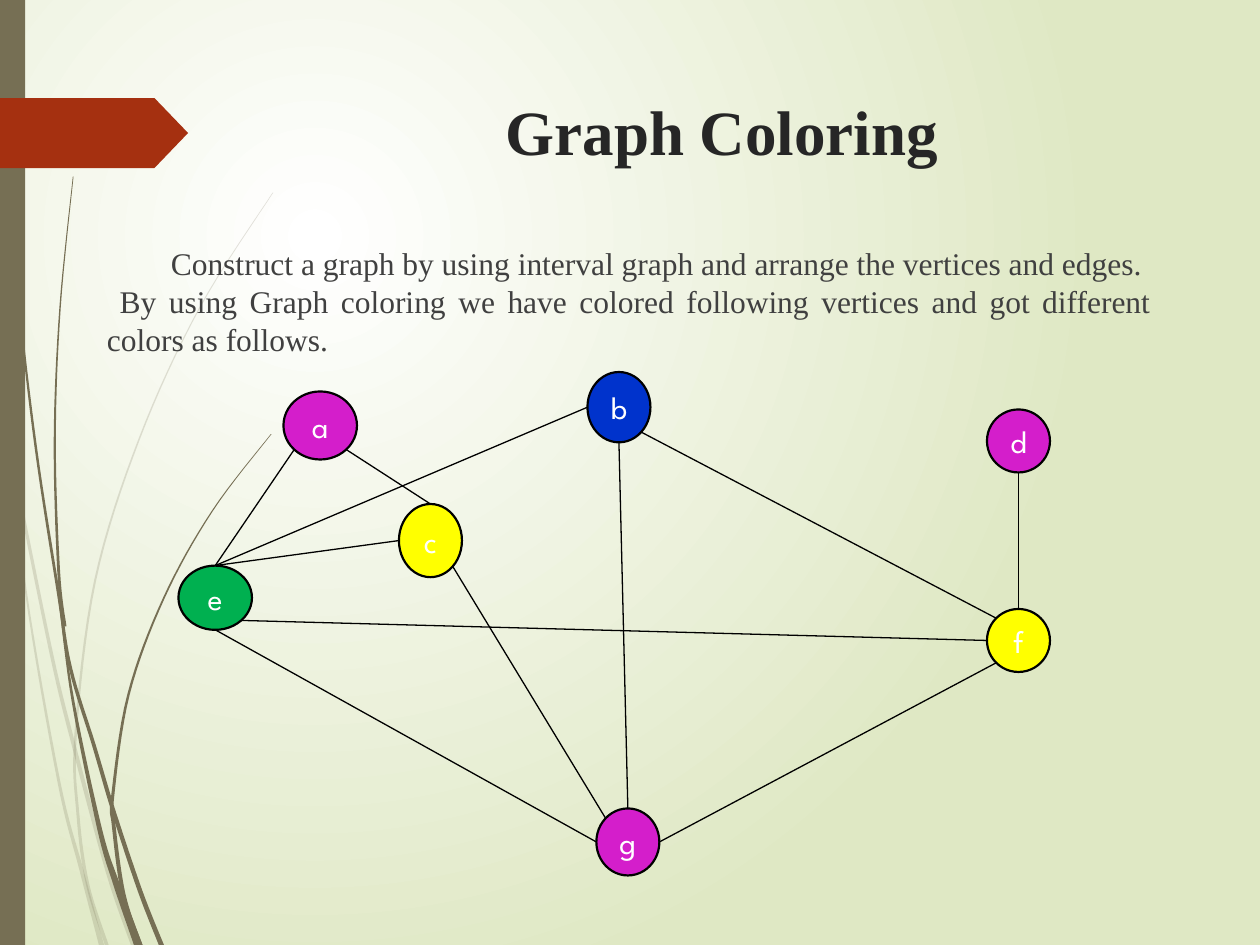
"""Build the Graph Coloring slide: a coloured interval graph over a decorated background."""
from dataclasses import dataclass

from lxml import etree
from pptx import Presentation
from pptx import util as u
from pptx.dml.color import RGBColor
from pptx.enum import shapes, text
from pptx.oxml.ns import qn

Pt = u.Pt
BLACK = RGBColor(0x00, 0x00, 0x00)
WHITE = RGBColor(0xFF, 0xFF, 0xFF)
HEADING = RGBColor(0x26, 0x26, 0x26)
BODY = RGBColor(0x40, 0x40, 0x40)
OLIVE = RGBColor(0x76, 0x6F, 0x54)
RUST = RGBColor(0xA5, 0x30, 0x10)
PALE_GREEN = RGBColor(0xDF, 0xE8, 0xC4)
MAGENTA = RGBColor(0xD4, 0x1E, 0xCB)
GREEN = RGBColor(0x00, 0xB0, 0x50)
YELLOW = RGBColor(0xFF, 0xFF, 0x00)
BLUE = RGBColor(0x00, 0x33, 0xCC)
SERIF = "Times New Roman"
SANS = "League Spartan"
DIAGONAL = 0.354
SITES = {
    "top": (0, -0.5), "bottom": (0, 0.5), "left": (-0.5, 0), "right": (0.5, 0),
    "top left": (-DIAGONAL, -DIAGONAL), "bottom left": (-DIAGONAL, DIAGONAL),
    "bottom right": (DIAGONAL, DIAGONAL),
}


@dataclass(frozen=True)
class Strand:
    points: tuple
    start_width: float
    end_width: float
    opacity: int = 100


@dataclass(frozen=True)
class Vertex:
    x: float
    y: float
    width: float
    height: float
    color: RGBColor

    def site(self, side: str) -> tuple:
        dx, dy = SITES[side]
        return self.x + self.width * (0.5 + dx), self.y + self.height * (0.5 + dy)


@dataclass(frozen=True)
class Edge:
    start: str
    start_side: str
    end: str
    end_side: str


STRANDS = (
    Strand(((0, 209), (5, 250), (8, 268), (29.5, 374), (43, 429), (62, 499), (76.3, 540)), 1, 3, 20),
    Strand(((5.8, 252), (14.8, 338), (33.5, 446), (46.5, 497), (58, 540)), 0.4, 3, 20),
    Strand(((156, 110), (114, 176), (79.5, 251), (54.3, 332), (43.2, 420), (44.5, 465),
            (50, 505), (61, 540)), 0.4, 2.2, 20),
    Strand(((1.8, 0), (4, 79), (10.4, 168), (20.5, 256), (33.5, 340), (40.3, 382),
            (53.7, 426), (65, 464), (80, 509), (92.2, 540)), 0.6, 3, 100),
    Strand(((33.8, 343), (41.8, 401), (57, 474), (66.5, 505), (79, 540)), 0.5, 5, 100),
    Strand(((41.8, 101), (34.3, 176), (31.3, 251), (33.5, 326), (37, 358)), 0.4, 2, 100),
    Strand(((155, 248), (121.3, 292), (93.5, 342), (73.4, 397), (64.4, 455), (65, 472),
            (70.5, 511), (80, 540)), 0.4, 2.8, 100),
)

VERTICES = {
    "a": Vertex(162, 223.7, 42, 38.9, MAGENTA),
    "e": Vertex(102, 323.2, 42, 36.7, GREEN),
    "c": Vertex(228, 288, 36, 41.8, YELLOW),
    "b": Vertex(335.7, 212.6, 36, 40.2, BLUE),
    "g": Vertex(340.8, 462, 36, 38.3, MAGENTA),
    "d": Vertex(564, 234, 36, 36, MAGENTA),
    "f": Vertex(564, 348, 36, 36, YELLOW),
}

EDGES = (
    Edge("e", "top", "a", "bottom left"),
    Edge("a", "bottom right", "c", "top"),
    Edge("e", "top", "c", "left"),
    Edge("e", "top", "b", "left"),
    Edge("e", "bottom right", "f", "left"),
    Edge("e", "bottom", "g", "left"),
    Edge("b", "bottom", "g", "top"),
    Edge("b", "bottom right", "f", "top left"),
    Edge("d", "bottom", "f", "top"),
    Edge("g", "right", "f", "bottom left"),
    Edge("c", "bottom right", "g", "top left"),
)


def write(paragraph, words: str, *, size: float, font: str, color: RGBColor, bold: bool = False,
          align=text.PP_ALIGN.CENTER, indent: float = 0, before: float = 0) -> None:
    run = paragraph.add_run()
    run.text = words
    run.font.size, run.font.name, run.font.bold = Pt(size), font, bold
    run.font.color.rgb = color
    paragraph.alignment = align
    paragraph.space_before = Pt(before)
    if indent:
        paragraph._p.get_or_add_pPr().set("indent", str(Pt(indent)))


def paint(shape, color: RGBColor, opacity: int = 100) -> None:
    shape.shadow.inherit = False
    shape.line.fill.background()
    shape.fill.solid()
    shape.fill.fore_color.rgb = color
    if opacity < 100:
        tint = shape._element.spPr.find(".//" + qn("a:srgbClr"))
        etree.SubElement(tint, qn("a:alpha"), val=str(opacity * 1000))


def smooth(points: tuple, steps: int = 8) -> list:
    padded = (points[0], *points, points[-1])
    curve = []
    for p0, p1, p2, p3 in zip(padded, padded[1:], padded[2:], padded[3:]):
        for t in (step / steps for step in range(steps)):
            curve.append(tuple(
                0.5 * (2 * b + (c - a) * t + (2 * a - 5 * b + 4 * c - d) * t**2
                       + (3 * b - a - 3 * c + d) * t**3)
                for a, b, c, d in zip(p0, p1, p2, p3)))
    return curve + [points[-1]]


def draw_strand(slide, strand: Strand) -> None:
    curve = smooth(strand.points)
    growth = (strand.end_width - strand.start_width) / (len(curve) - 1)
    halves = [(strand.start_width + growth * i) / 2 for i in range(len(curve))]
    left = [(Pt(x - half), Pt(y)) for (x, y), half in zip(curve, halves)]
    right = [(Pt(x + half), Pt(y)) for (x, y), half in zip(curve, halves)]
    builder = slide.shapes.build_freeform(*left[0])
    builder.add_line_segments(left[1:] + right[::-1], close=True)
    paint(builder.convert_to_shape(), OLIVE, strand.opacity)


def draw_vertex(slide, label: str, vertex: Vertex) -> None:
    oval = slide.shapes.add_shape(shapes.MSO_SHAPE.OVAL, Pt(vertex.x), Pt(vertex.y),
                                  Pt(vertex.width), Pt(vertex.height))
    paint(oval, vertex.color)
    oval.line.color.rgb = BLACK
    oval.line.width = Pt(1.25)
    oval.text_frame.vertical_anchor = text.MSO_ANCHOR.MIDDLE
    write(oval.text_frame.paragraphs[0], label, size=18, font=SANS, color=WHITE)


def draw_edge(slide, edge: Edge) -> None:
    start = VERTICES[edge.start].site(edge.start_side)
    end = VERTICES[edge.end].site(edge.end_side)
    line = slide.shapes.add_connector(shapes.MSO_CONNECTOR.STRAIGHT, *map(Pt, start + end))
    line.line.color.rgb = BLACK
    line.line.width = Pt(0.75)
    etree.SubElement(line._element.spPr, qn("a:effectLst"))


def draw_background(slide) -> None:
    fill = slide.background.fill
    fill.gradient()
    for stop, color in zip(fill.gradient_stops, (WHITE, PALE_GREEN)):
        stop.color.rgb = color
    gradient = slide._element.find(".//" + qn("a:gradFill"))
    gradient.remove(gradient.find(qn("a:lin")))
    focus = etree.SubElement(gradient, qn("a:path"), path="circle")
    etree.SubElement(focus, qn("a:fillToRect"), l="50000", t="50000", r="100000", b="100000")
    for strand in STRANDS:
        draw_strand(slide, strand)
    band = slide.shapes.add_shape(shapes.MSO_SHAPE.RECTANGLE, 0, 0, Pt(14.4), Pt(540))
    paint(band, OLIVE)
    tab = slide.shapes.add_shape(shapes.MSO_SHAPE.PENTAGON, 0, Pt(56), Pt(107.5), Pt(40))
    tab.adjustments[0] = 0.48
    paint(tab, RUST)


def main() -> None:
    deck = Presentation()
    deck.slide_width, deck.slide_height = Pt(720), Pt(540)
    slide = deck.slides.add_slide(deck.slide_layouts[5])
    draw_background(slide)

    title = slide.shapes.title
    title.left, title.top, title.width, title.height = Pt(153), Pt(49), Pt(519), Pt(101)
    title.text_frame.vertical_anchor = text.MSO_ANCHOR.TOP
    write(title.text_frame.paragraphs[0], "Graph Coloring", size=36, font=SERIF,
          color=HEADING, bold=True)

    body = slide.shapes.add_textbox(Pt(54), Pt(136), Pt(611), Pt(379.5)).text_frame
    body.word_wrap = True
    style = dict(size=18, font=SERIF, color=BODY, align=text.PP_ALIGN.JUSTIFY)
    write(body.paragraphs[0], "Construct a graph by using interval graph and arrange the "
          "vertices and edges.", indent=36.5, before=6, **style)
    write(body.add_paragraph(), "By using Graph coloring we have colored following vertices "
          "and got different colors as follows.", indent=7.3, **style)
    for paragraph in body.paragraphs:
        paragraph.line_spacing = Pt(21.7)

    for label, vertex in VERTICES.items():
        draw_vertex(slide, label, vertex)
    for edge in EDGES:
        draw_edge(slide, edge)
    deck.save("out.pptx")


if __name__ == "__main__":
    main()
